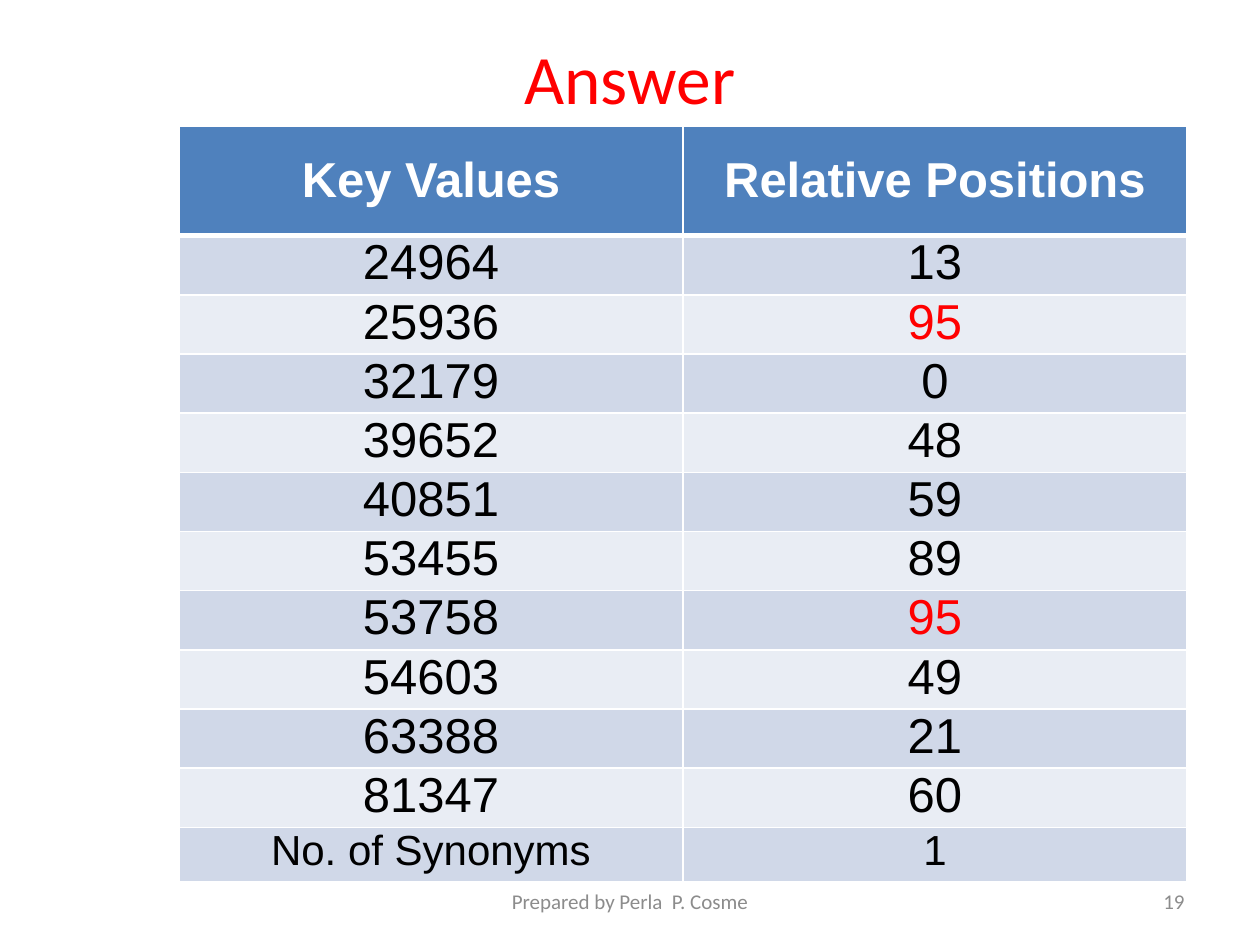
import pptx
import pptx.dml.color
import pptx.enum.text
import pptx.oxml
import pptx.oxml.ns
import pptx.util

WIDTH, HEIGHT = 10, 7.5
WHITE, BLACK, RED, GREY = "FFFFFF", "000000", "FF0000", "8C8C8C"
HEADER_FILL, BAND_FILLS = "4F81BD", ("D0D8E8", "E9EDF4")
ALIGN = pptx.enum.text.PP_ALIGN
ANCHOR = pptx.enum.text.MSO_ANCHOR
inches = pptx.util.Inches

HEADINGS = ("Key Values", "Relative Positions")
POSITIONS = {
    "24964": 13, "25936": 95, "32179": 0, "39652": 48, "40851": 59,
    "53455": 89, "53758": 95, "54603": 49, "63388": 21, "81347": 60,
}
SYNONYMS = ("No. of Synonyms", "1")
HEADER_SHARE, TOTAL_SHARE = 0.145, 0.072


def color(value):
    return pptx.dml.color.RGBColor.from_string(value)


def write(frame, text, size=28, font="Arial", ink=BLACK, bold=False, align=ALIGN.CENTER):
    paragraph = frame.paragraphs[0]
    paragraph.alignment = align
    run = paragraph.add_run()
    run.text = text
    run.font.size = pptx.util.Pt(size)
    run.font.name = font
    run.font.bold = bold
    run.font.color.rgb = color(ink)


def add_label(slide, box, text, **text_format):
    shape = slide.shapes.add_textbox(*map(inches, box))
    shape.text_frame.word_wrap = True
    shape.text_frame.vertical_anchor = ANCHOR.MIDDLE
    write(shape.text_frame, text, font="Calibri", **text_format)


def set_borders(cell, bottom=1):
    properties = cell._tc.get_or_add_tcPr()
    namespace = pptx.oxml.ns.nsdecls("a")
    for side, points in (("L", 1), ("R", 1), ("T", 1), ("B", bottom)):
        properties.append(pptx.oxml.parse_xml(
            f'<a:ln{side} {namespace} w="{pptx.util.Pt(points)}"><a:solidFill>'
            f'<a:srgbClr val="{WHITE}"/></a:solidFill></a:ln{side}>'))


def fill_cell(cell, text, fill, anchor=ANCHOR.TOP, bottom=1, **text_format):
    set_borders(cell, bottom)
    cell.fill.solid()
    cell.fill.fore_color.rgb = color(fill)
    cell.margin_left = cell.margin_right = inches(0.07)
    cell.margin_top = cell.margin_bottom = 0
    cell.vertical_anchor = anchor
    write(cell.text_frame, text, **text_format)


def add_positions_table(slide, box):
    values = list(POSITIONS.values())
    body = [(key, str(value)) for key, value in POSITIONS.items()] + [SYNONYMS]
    table = slide.shapes.add_table(len(body) + 1, len(HEADINGS), *map(inches, box)).table
    table.first_row = table.horz_banding = False

    key_share = (1 - HEADER_SHARE - TOTAL_SHARE) / len(POSITIONS)
    shares = [HEADER_SHARE] + [key_share] * len(POSITIONS) + [TOTAL_SHARE]
    for row, share in zip(table.rows, shares):
        row.height = inches(box[3] * share)

    for column, heading in enumerate(HEADINGS):
        fill_cell(table.cell(0, column), heading, HEADER_FILL, anchor=ANCHOR.MIDDLE,
                  bottom=3, ink=WHITE, bold=True)
    for index, entry in enumerate(body):
        is_total = index == len(POSITIONS)
        collides = not is_total and values.count(values[index]) > 1
        for column, text in enumerate(entry):
            fill_cell(table.cell(index + 1, column), text, BAND_FILLS[index % 2],
                      size=24 if is_total else 28,
                      ink=RED if collides and column == 1 else BLACK)


def add_footer(slide, box):
    left, top, width, height = box
    third = width * 0.35
    add_label(slide, (left + (width - third) / 2, top, third, height),
              "Prepared by Perla  P. Cosme", size=12, ink=GREY)
    number_width = width * 0.26
    add_label(slide, (left + width - number_width, top, number_width, height),
              "19", size=12, ink=GREY, align=ALIGN.RIGHT)


def main():
    presentation = pptx.Presentation()
    presentation.slide_width, presentation.slide_height = inches(WIDTH), inches(HEIGHT)
    slide = presentation.slides.add_slide(presentation.slide_layouts[6])
    margin = WIDTH * 0.05
    content_width = WIDTH - 2 * margin
    add_label(slide, (margin, HEIGHT * 0.04, content_width, 0.62), "Answer", size=39.6, ink=RED)
    add_positions_table(slide, (1.42, 1, WIDTH * 0.8, HEIGHT * 0.8))
    add_footer(slide, (margin, 6.95, content_width, 0.4))
    presentation.save("out.pptx")


if __name__ == "__main__":
    main()
